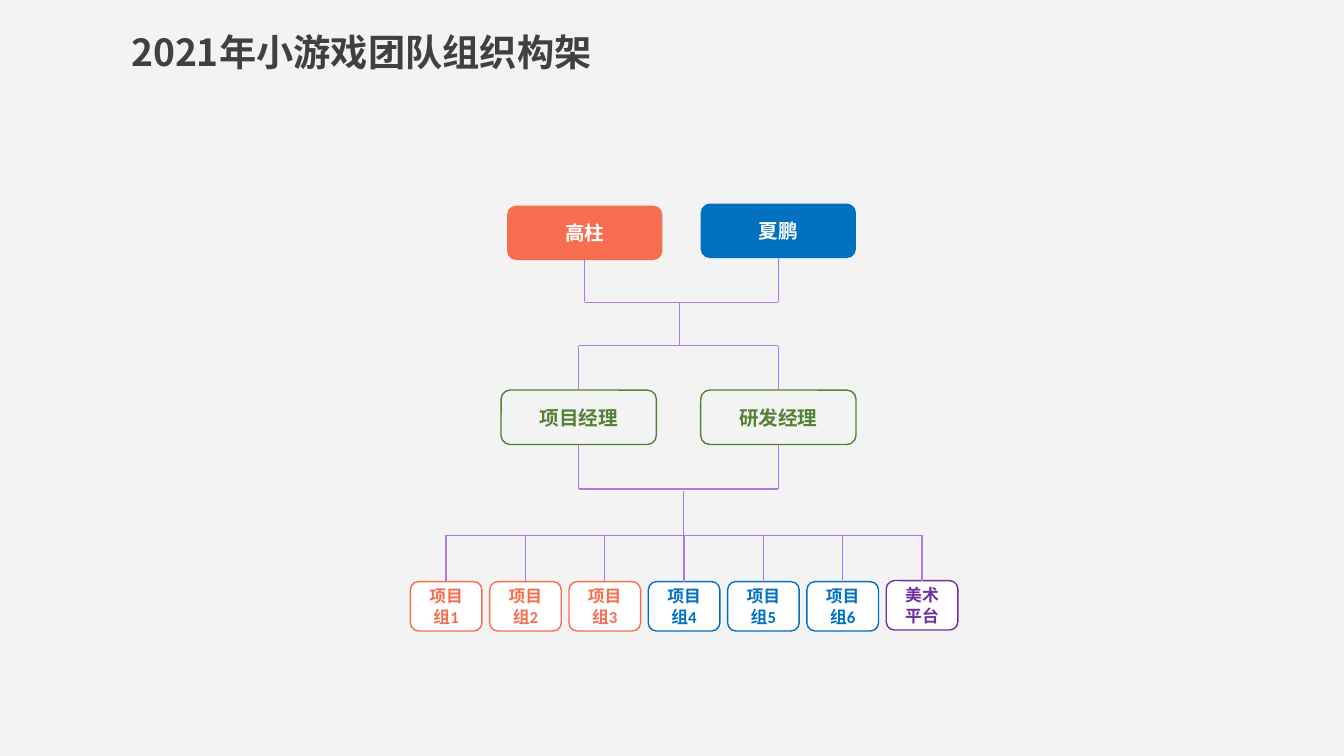
from lxml.etree import SubElement
from pptx import Presentation
from pptx.dml.color import RGBColor
from pptx.enum.shapes import MSO_CONNECTOR as Conn, MSO_SHAPE as Shape
from pptx.enum.text import MSO_ANCHOR as Anchor, MSO_AUTO_SIZE as Fit, PP_ALIGN as Align
from pptx.oxml.ns import qn
from pptx.util import Inches, Pt

PAPER = RGBColor(0xF3, 0xF3, 0xF3)
INK = RGBColor(0x40, 0x40, 0x40)
WHITE = RGBColor(0xFF, 0xFF, 0xFF)
CORAL = RGBColor(0xF6, 0x6E, 0x4F)
BLUE = RGBColor(0x00, 0x70, 0xC0)
GREEN = RGBColor(0x54, 0x82, 0x35)
PURPLE = RGBColor(0x70, 0x30, 0xA0)
LILAC = RGBColor(0xAD, 0x7A, 0xE1)

CJK = "Noto Sans CJK SC"
BIG = (1.54, 0.54)
SMALL = (0.71, 0.49)
TOP, BOTTOM = 0, 2


def apply(target, values):
    for name, value in values.items():
        setattr(target, name, value)


def style(para, size, color, face, align):
    para.alignment = align
    font = para.runs[0].font
    apply(font, {"size": Pt(size), "bold": True, "name": face})
    font.color.rgb = color


def add_title(slide, text):
    title = slide.shapes.title
    apply(title, {"left": Inches(1.2), "top": Inches(0.3),
                  "width": Inches(4.82), "height": Inches(0.55)})
    frame = title.text_frame
    frame.text = text
    apply(frame, {"word_wrap": True, "vertical_anchor": Anchor.TOP,
                  "auto_size": Fit.SHAPE_TO_FIT_TEXT})
    para = frame.paragraphs[0]
    para.line_spacing = 0.86
    style(para, 26.6, INK, CJK, Align.LEFT)
    # East Asian typeface
    face = SubElement(para.runs[0].font._element, qn("a:ea"))
    face.set("typeface", CJK)


def add_box(slide, text, left, top, size, ink, fill=None, edge=None):
    spot = [Inches(v) for v in (left, top, *size)]
    box = slide.shapes.add_shape(Shape.ROUNDED_RECTANGLE, *spot)
    box.shadow.inherit = False
    if fill is None:
        box.fill.background()
    else:
        box.fill.solid()
        box.fill.fore_color.rgb = fill
    if edge is None:
        box.line.fill.background()
    else:
        box.line.color.rgb = edge
        box.line.width = Pt(1)
    frame = box.text_frame
    frame.text = text
    apply(frame, {"word_wrap": True, "vertical_anchor": Anchor.MIDDLE})
    style(frame.paragraphs[0], 14 if size == BIG else 12, ink, "Calibri", Align.CENTER)
    return box


def add_line(slide, x1, y1, x2, y2):
    line = slide.shapes.add_connector(Conn.STRAIGHT, x1, y1, x2, y2)
    line.line.color.rgb = LILAC
    line.line.width = Pt(1)
    SubElement(line._element.spPr, qn("a:effectLst"))
    return line


def middle(box):
    return box.left + box.width // 2


def add_comb(slide, boxes, side, level):
    """Join one side of each box to a shared bar."""
    y = Inches(level)
    for box in boxes:
        x = middle(box)
        add_line(slide, x, y, x, y).begin_connect(box, side)
    add_line(slide, middle(boxes[0]), y, middle(boxes[-1]), y)


def add_trunk(slide, x, top, bottom):
    add_line(slide, Inches(x), Inches(top), Inches(x), Inches(bottom))


def main():
    deck = Presentation()
    apply(deck, {"slide_width": Inches(13.33), "slide_height": Inches(7.5)})
    slide = deck.slides.add_slide(deck.slide_layouts[5])
    slide.background.fill.solid()
    slide.background.fill.fore_color.rgb = PAPER
    add_title(slide, "2021年小游戏团队组织构架")

    # Leaders and managers
    heads = [add_box(slide, "高柱", 5.03, 2.04, BIG, WHITE, CORAL),
             add_box(slide, "夏鹏", 6.95, 2.02, BIG, WHITE, BLUE)]
    leads = [add_box(slide, text, left, 3.87, BIG, GREEN, edge=GREEN)
             for text, left in (("项目经理", 4.97), ("研发经理", 6.95))]

    # Project teams and art platform
    teams = [(f"项目组{n}", 5.77, CORAL if n < 4 else BLUE) for n in range(1, 7)]
    teams.append(("美术平台", 5.76, PURPLE))
    step = (8.79 - 4.07) / 6
    leaves = [add_box(slide, text, 4.07 + i * step, top, SMALL, color, WHITE, color)
              for i, (text, top, color) in enumerate(teams)]

    # Lines between the levels
    add_comb(slide, heads, BOTTOM, 3)
    add_trunk(slide, 6.74, 3, 3.43)
    add_comb(slide, leads, TOP, 3.43)
    add_comb(slide, leads, BOTTOM, 4.85)
    add_trunk(slide, 6.78, 4.87, 5.31)
    add_comb(slide, leaves, TOP, 5.31)

    deck.save("out.pptx")


if __name__ == "__main__":
    main()
